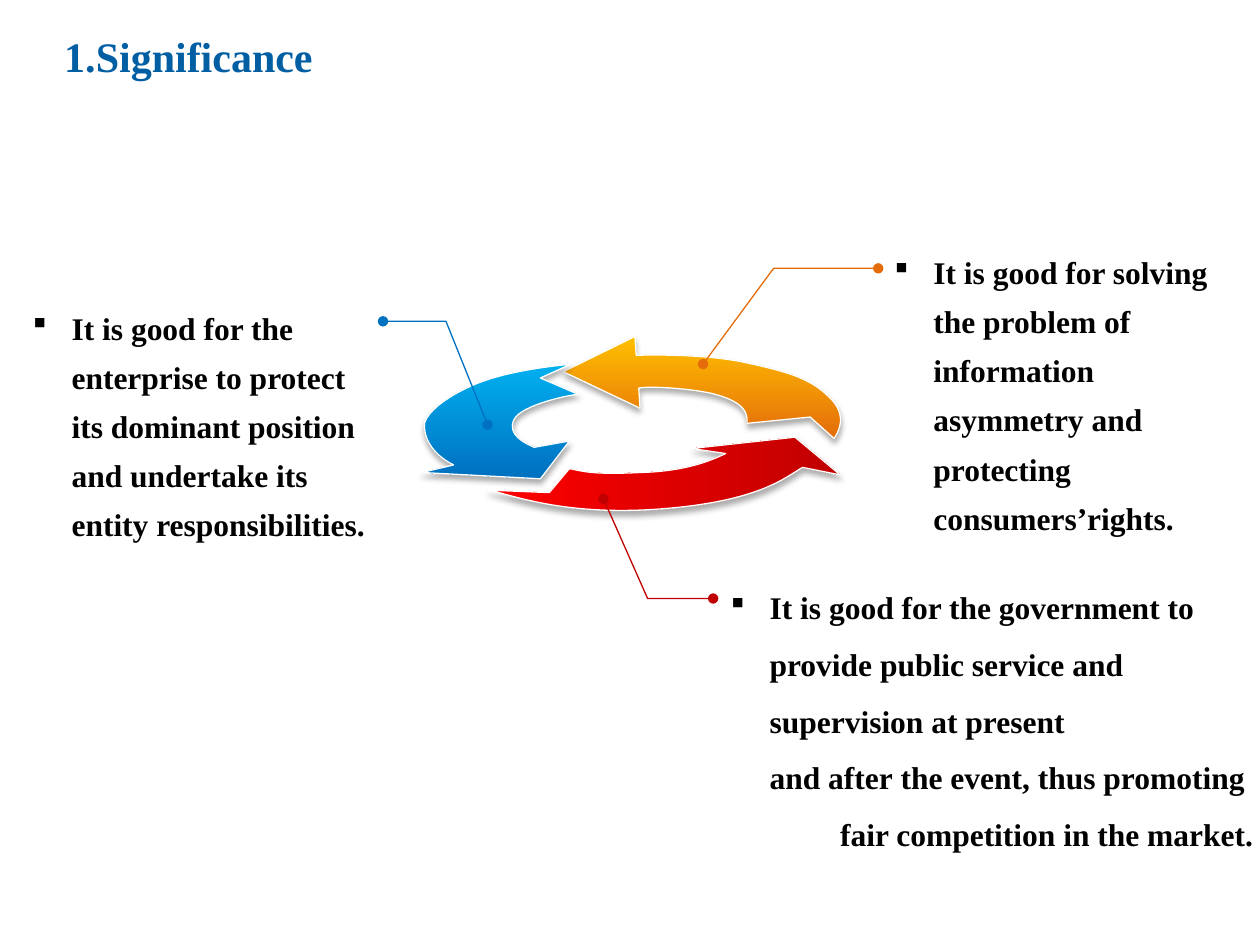
from itertools import chain

from lxml import etree
from pptx import Presentation
from pptx import util as u
from pptx.dml.color import RGBColor
from pptx.enum import text as t
from pptx.oxml.ns import qn

FONT = "Times New Roman"
COLORS = {
    "title": "005EA2", "text": "000000", "outline": "FFFFFF",
    "red": "FF0000", "dark red": "C00000",
    "yellow": "FFC000", "orange": "E46C0A",
    "light blue": "00B0F0", "blue": "0070C0",
}

# Outlines in inches: a pair is a corner, six numbers are a Bezier curve.
ARROWS = [
    {"colors": ("red", "dark red"), "angle": 0, "outline": [
        (4.52, 3.72), (4.63, 3.74, 4.69, 3.77, 5.09, 3.75),
        (5.49, 3.74, 5.69, 3.63, 5.76, 3.6), (5.49, 3.56), (6.31, 3.47),
        (6.67, 3.77), (6.37, 3.71), (6.23, 3.79, 6.03, 3.98, 5.24, 4.04),
        (4.44, 4.1, 4.02, 3.91, 3.87, 3.89), (4.36, 3.91), (4.52, 3.72)]},
    {"colors": ("yellow", "orange"), "angle": 270, "outline": [
        (5.05, 2.82), (5.04, 2.67), (4.47, 2.95), (5.08, 3.24), (5.07, 3.08),
        (5.17, 3.06, 5.57, 3.09, 5.71, 3.14),
        (5.98, 3.22, 5.92, 3.35, 5.93, 3.36), (6.43, 3.31), (6.62, 3.48),
        (6.64, 3.45, 6.74, 3.31, 6.59, 3.16),
        (6.44, 3.01, 6.29, 2.96, 5.93, 2.88),
        (5.57, 2.8, 5.05, 2.82, 5.05, 2.82)]},
    {"colors": ("light blue", "blue"), "angle": 270, "outline": [
        (3.35, 3.75), (4.29, 3.8), (4.52, 3.5), (4.24, 3.55),
        (4.17, 3.52, 4.02, 3.45, 4.08, 3.33),
        (4.14, 3.21, 4.54, 3.13, 4.59, 3.13), (4.29, 3), (4.53, 2.89),
        (4.23, 2.92, 3.96, 2.97, 3.77, 3.05),
        (3.58, 3.13, 3.4, 3.25, 3.37, 3.36),
        (3.36, 3.46, 3.42, 3.6, 3.6, 3.69), (3.35, 3.75)]},
]
CALLOUTS = [
    ("orange", [(5.58, 2.89), (6.14, 2.13), (6.97, 2.13)]),
    ("blue", [(3.87, 3.37), (3.54, 2.55), (3.04, 2.55)]),
    ("dark red", [(4.79, 3.96), (5.14, 4.75), (5.66, 4.75)]),
]
# Box, line spacing, bulleted text, and an indented closing line if any.
# A tilde stands for a no-break space.
POINTS = [
    ((7, 1.87, 2.76, 2.46), 1.3,
     "It is good for solving the problem of information asymmetry and "
     "protecting consumers’rights.", None),
    ((0.16, 2.31, 2.91, 2.07), 1.3,
     "It is good for the enterprise to protect its dominant position and "
     "undertake its entity responsibilities.", None),
    ((5.7, 4.47, 4.37, 2.37), 1.5,
     "It is good for the government to provide public service and "
     "supervision~at present and~after~the~event, thus promoting",
     "fair competition in the market."),
]
NO_BREAK_SPACE = chr(160)
BULLET_INDENT = 0.31
CLOSING_INDENT = 0.87


def rgb(name):
    return RGBColor.from_string(COLORS[name])


def add_xml(parent, tag, **attributes):
    return etree.SubElement(parent, qn(tag), attributes)


def add_outline(slide, outline, color, close):
    numbers = [u.Inches(number) for number in chain(*outline)]
    points = list(zip(numbers[::2], numbers[1::2]))
    builder = slide.shapes.build_freeform(*points[0])
    builder.add_line_segments(points[1:], close=close)
    shape = builder.convert_to_shape()
    bend_curves(shape, outline)
    shape.shadow.inherit = False
    shape.line.color.rgb = rgb(color)
    shape.line.width = u.Pt(0.75)
    return shape


def bend_curves(shape, outline):
    """Merge the three segments drawn for each curve into one Bezier."""
    segments = iter(list(shape._element.spPr.iter(qn("a:lnTo"))))
    for part in outline[1:]:
        first = next(segments)
        if len(part) == 6:
            first.tag = qn("a:cubicBezTo")
            for segment in (next(segments), next(segments)):
                first.append(segment[0])
                segment.getparent().remove(segment)


def add_arrow(slide, outline, colors, angle):
    shape = add_outline(slide, outline, "outline", True)
    shape.fill.gradient()
    shape.fill.gradient_angle = angle
    for stop, color in zip(shape.fill.gradient_stops, colors):
        stop.color.rgb = rgb(color)
    effects = shape._element.spPr.find(qn("a:effectLst"))
    shadow = add_xml(effects, "a:outerShdw", blurRad=str(u.Pt(3.5)), dist=str(u.Pt(2.2)),
                     dir="5400000", algn="t", rotWithShape="0")
    add_xml(add_xml(shadow, "a:srgbClr", val="000000"), "a:alpha", val="32000")


def add_callout(slide, color, points):
    shape = add_outline(slide, points, color, False)
    shape.fill.background()
    line = shape.line._get_or_add_ln()
    for end in ("a:headEnd", "a:tailEnd"):
        add_xml(line, end, type="oval")


def write(paragraph, content, size=18, color="text", spacing=None, indent=0, bullet=None):
    paragraph.alignment = t.PP_ALIGN.LEFT
    paragraph.line_spacing = spacing
    properties = paragraph._p.get_or_add_pPr()
    properties.set("marL", str(u.Inches(indent)))
    properties.set("indent", str(-u.Inches(indent) if bullet else 0))
    if bullet:
        add_xml(properties, "a:buFont", typeface="Wingdings", charset="2")
        add_xml(properties, "a:buChar", char=bullet)
    run = paragraph.add_run()
    run.text = content.replace("~", NO_BREAK_SPACE)
    run.font.name = FONT
    run.font.size = u.Pt(size)
    run.font.bold = True
    run.font.color.rgb = rgb(color)


def add_point(slide, box, spacing, content, closing):
    frame = slide.shapes.add_textbox(*map(u.Inches, box)).text_frame
    frame.word_wrap = True
    frame.auto_size = t.MSO_AUTO_SIZE.SHAPE_TO_FIT_TEXT
    write(frame.paragraphs[0], content, spacing=spacing, indent=BULLET_INDENT, bullet="§")
    if closing:
        write(frame.add_paragraph(), closing, spacing=spacing, indent=CLOSING_INDENT)


def main():
    presentation = Presentation()
    presentation.slide_width, presentation.slide_height = u.Inches(10), u.Inches(7.5)
    slide = presentation.slides.add_slide(presentation.slide_layouts[5])

    title = slide.shapes.title
    title.left, title.top, title.width, title.height = map(u.Inches, (0.41, 0.14, 9, 0.61))
    title.text_frame.vertical_anchor = t.MSO_ANCHOR.MIDDLE
    write(title.text_frame.paragraphs[0], "1.Significance", size=24, color="title")

    for arrow in ARROWS:
        add_arrow(slide, **arrow)
    for color, points in CALLOUTS:
        add_callout(slide, color, points)
    for point in POINTS:
        add_point(slide, *point)
    presentation.save("out.pptx")


if __name__ == "__main__":
    main()
